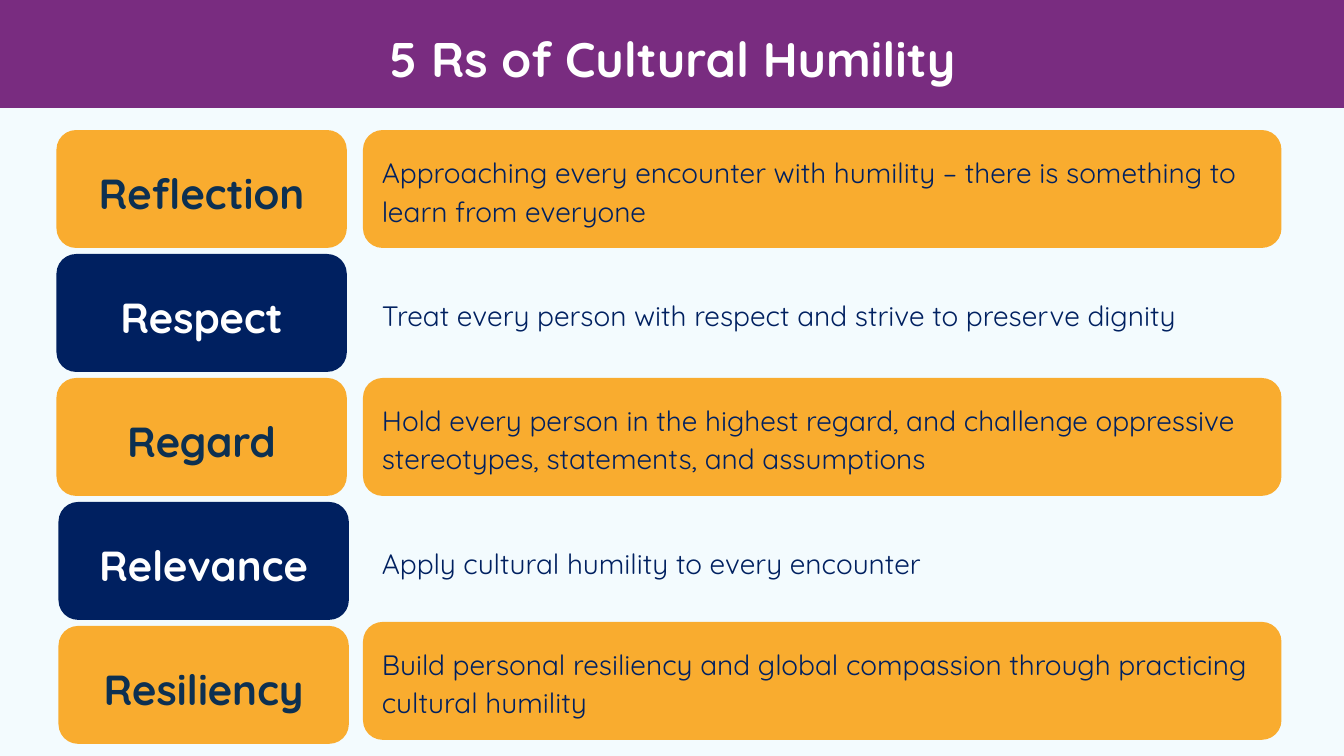
from pptx import Presentation
from pptx import util as u
from pptx.dml.color import RGBColor
from pptx.enum import shapes, text

PX = 9144  # EMU per px, 100 px to the inch
PURPLE = RGBColor(0x79, 0x2C, 0x80)
ORANGE = RGBColor(0xF9, 0xAC, 0x2F)
NAVY = RGBColor(0x00, 0x20, 0x60)
INK = RGBColor(0x0D, 0x30, 0x51)
PALE = RGBColor(0xF3, 0xFB, 0xFE)
WHITE = RGBColor(0xFF, 0xFF, 0xFF)
LEFT, CENTER = text.PP_ALIGN.LEFT, text.PP_ALIGN.CENTER


def add_panel(kind, left, top, width, height, fill):
    panel = page.shapes.add_shape(kind, *(n * PX for n in (left, top, width, height)))
    panel.shadow.inherit = False
    panel.fill.solid()
    panel.fill.fore_color.rgb = fill
    panel.line.fill.background()
    return panel


def write(box, words, align, spacing, anchor, font):
    frame = box.text_frame
    frame.word_wrap = True
    frame.vertical_anchor = anchor
    for side in ("left", "top", "right", "bottom"):
        setattr(frame, f"margin_{side}", 13 * PX)
    para = frame.paragraphs[0]
    para.alignment = align
    para.line_spacing = spacing
    span = para.add_run()
    span.text = words
    span.font.color.rgb = font["color"]
    for name in ("size", "bold"):
        setattr(span.font, name, font[name])
    span.font.name = "Quicksand"


deck = Presentation()
deck.slide_width, deck.slide_height = 1333 * PX, 750 * PX
page = deck.slides.add_slide(deck.slide_layouts[6])
page.background.fill.solid()
page.background.fill.fore_color.rgb = PALE

# Title band
add_panel(shapes.MSO_SHAPE.RECTANGLE, 0, -1, 1333, 108, PURPLE)
title = page.shapes.add_textbox(69 * PX, 16 * PX, 1196 * PX, 73 * PX)
write(title, "5 Rs of Cultural Humility", CENTER, 1.0, text.MSO_ANCHOR.TOP,
      {"size": u.Pt(34.7), "bold": True, "color": WHITE})

# Rows: term, term left, description top offset, description
rows = [
    ("Reflection", 56, 0, "Approaching every encounter with humility – there is something to learn from everyone"),
    ("Respect", 56, 0, "Treat every person with respect and strive to preserve dignity"),
    ("Regard", 56, 0, "Hold every person in the highest regard, and challenge oppressive stereotypes, statements, and assumptions"),
    ("Relevance", 58, 0, "Apply cultural humility to every encounter"),
    ("Resiliency", 58, -4, "Build personal resiliency and global compassion through practicing cultural humility"),
]
for index, (term, term_left, offset, description) in enumerate(rows):
    top = 129 + 123 * index
    if index % 2 == 0:
        term_fill, term_color, description_fill = ORANGE, INK, ORANGE
    else:
        term_fill, term_color, description_fill = NAVY, WHITE, PALE
    cells = [
        (term, term_left, top, 288, term_fill, CENTER,
         {"size": u.Pt(30), "bold": True, "color": term_color}),
        (description, 360, top + offset, 911, description_fill, LEFT,
         {"size": u.Pt(20), "bold": False, "color": NAVY}),
    ]
    for words, left, cell_top, width, fill, align, font in cells:
        panel = add_panel(shapes.MSO_SHAPE.ROUNDED_RECTANGLE, left, cell_top, width, 117, fill)
        write(panel, words, align, 1.15, text.MSO_ANCHOR.MIDDLE, font)

deck.save("out.pptx")
